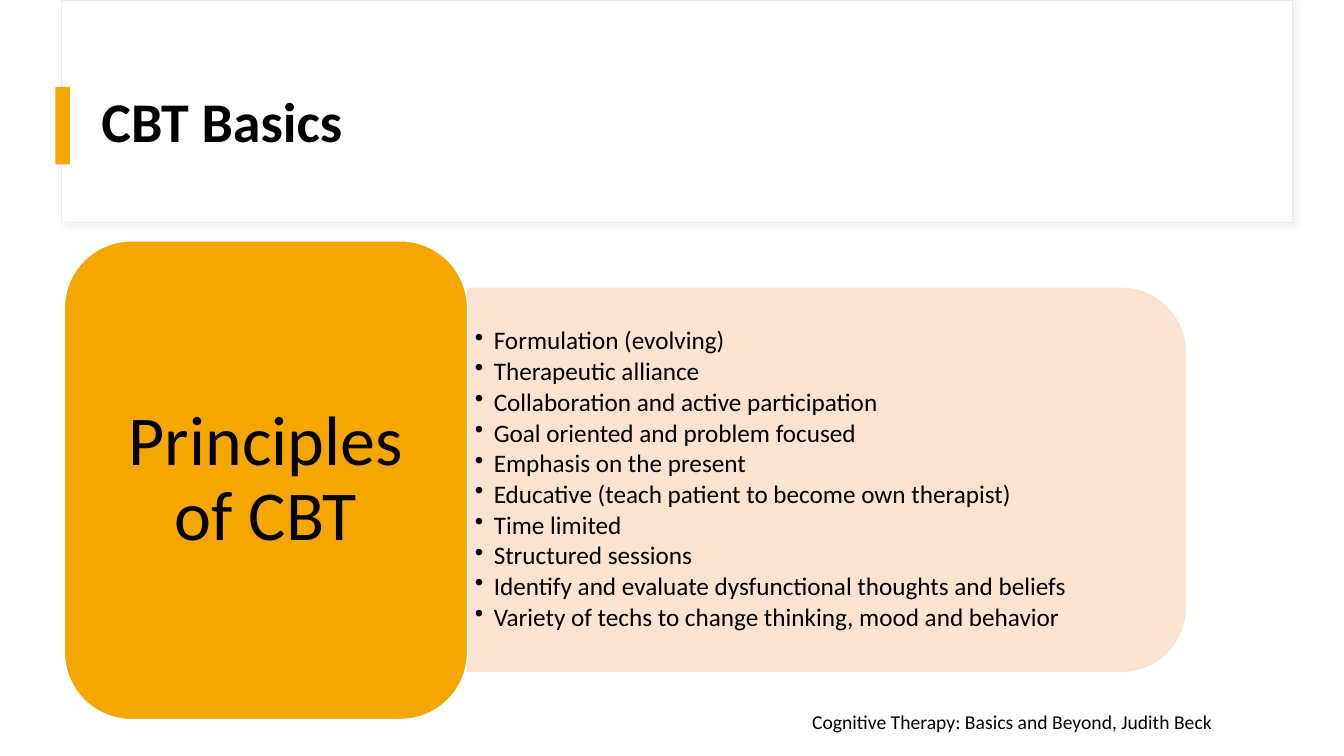
from lxml import etree
from pptx import Presentation
from pptx.dml.color import RGBColor
from pptx.enum import shapes, text
from pptx.oxml import ns
from pptx.util import Pt

KIND = shapes.MSO_SHAPE
FONT = "Calibri"
BLACK, WHITE, GOLD, PEACH = "000000", "FFFFFF", "F5A700", "FBE1CC"

POINTS = [
    "Formulation (evolving)",
    "Therapeutic alliance",
    "Collaboration and active participation",
    "Goal oriented and problem focused",
    "Emphasis on the present",
    "Educative (teach patient to become own therapist)",
    "Time limited",
    "Structured sessions",
    "Identify and evaluate dysfunctional thoughts and beliefs",
    "Variety of techs to change thinking, mood and behavior",
]


def paint(fill, color):
    fill.solid()
    fill.fore_color.rgb = RGBColor.from_string(color)


def sub(node, tag, **attrs):
    return etree.SubElement(node, ns.qn(tag), {k: str(v) for k, v in attrs.items()})


def fade(shape, percent):
    """Set the opacity of a shape's fill and line."""
    for node in shape._element.spPr.iter(ns.qn("a:srgbClr")):
        sub(node, "a:alpha", val=percent * 1000)


def shade(shape):
    """Add a soft grey shadow at the lower right."""
    effects = shape._element.spPr.find(ns.qn("a:effectLst"))
    outer = sub(effects, "a:outerShdw", blurRad=Pt(4), dist=Pt(3),
                dir=45 * 60000, algn="tl", rotWithShape=0)
    sub(sub(outer, "a:srgbClr", val="D9D9D9"), "a:alpha", val=30000)


def block(slide, kind, box, fill, line=None, width=1):
    shape = slide.shapes.add_shape(kind, *map(Pt, box))
    shape.shadow.inherit = False
    paint(shape.fill, fill)
    if line:
        paint(shape.line.fill, line)
        shape.line.width = Pt(width)
    else:
        shape.line.fill.background()
    return shape


def inset(frame, side, edge):
    frame.margin_left = frame.margin_right = Pt(side)
    frame.margin_top = frame.margin_bottom = Pt(edge)


def write(para, words, size, bold=False, space=0.9, after=0):
    para.line_spacing = space
    para.space_after = Pt(after)
    run = para.add_run()
    run.text = words
    run.font.name = FONT
    run.font.size = Pt(size)
    run.font.bold = bold
    paint(run.font.fill, BLACK)


def label(slide, box, wrap=True, anchor=text.MSO_ANCHOR.MIDDLE):
    frame = slide.shapes.add_textbox(*map(Pt, box)).text_frame
    frame.word_wrap = wrap
    frame.vertical_anchor = anchor
    return frame


def header(slide, x, y, w, h):
    shade(block(slide, KIND.RECTANGLE, (x, y, w, h), WHITE, "E9E9E9", 0.75))
    block(slide, KIND.RECTANGLE, (x - 4.4, y + 62, 10.4, 55.4), GOLD)
    frame = label(slide, (x + 21.4, y + 42.5, 801, 93))
    write(frame.paragraphs[0], "CBT Basics", 40, bold=True)


def panel(slide, x, y, w, h):
    """Draw the list on a shape turned so that its round corners face right."""
    turned = (x + (w - h) / 2, y + (h - w) / 2, h, w)
    back = block(slide, KIND.ROUND_2_SAME_RECTANGLE, turned, PEACH, PEACH)
    back.rotation = 90
    fade(back, 90)
    frame = label(slide, (x, y + 13.4, w - 13.4, h - 26.8))
    inset(frame, 5.2, 2.6)
    for i, point in enumerate(POINTS):
        para = frame.add_paragraph() if i else frame.paragraphs[0]
        write(para, point, 18, after=2.5)
        props = para._p.get_or_add_pPr()
        props.set("marL", str(Pt(13.5)))
        props.set("indent", str(Pt(-13.5)))
        sub(props, "a:buChar", char="•")


def card(slide, x, y, w, h):
    shape = block(slide, KIND.ROUNDED_RECTANGLE, (x, y, w, h), GOLD, WHITE)
    frame = shape.text_frame
    frame.word_wrap = True
    frame.vertical_anchor = text.MSO_ANCHOR.MIDDLE
    inset(frame, 15, 7.5)
    para = frame.paragraphs[0]
    para.alignment = text.PP_ALIGN.CENTER
    write(para, "Principles of CBT", 50)


def source(slide, x, y, w, h):
    frame = label(slide, (x, y, w, h), False, text.MSO_ANCHOR.TOP)
    para = frame.paragraphs[0]
    para.alignment = text.PP_ALIGN.LEFT
    write(para, "Cognitive Therapy: Basics and Beyond, Judith Beck", 14, space=1.0)


def main():
    deck = Presentation()
    deck.slide_width, deck.slide_height = Pt(960), Pt(540)
    slide = deck.slides.add_slide(deck.slide_layouts[6])
    header(slide, 44, 0, 879, 159)
    panel(slide, 334, 206, 512.6, 273.6)
    card(slide, 46, 172, 288, 342)
    source(slide, 573, 503.3, 336, 24.5)
    deck.save("out.pptx")


if __name__ == "__main__":
    main()
